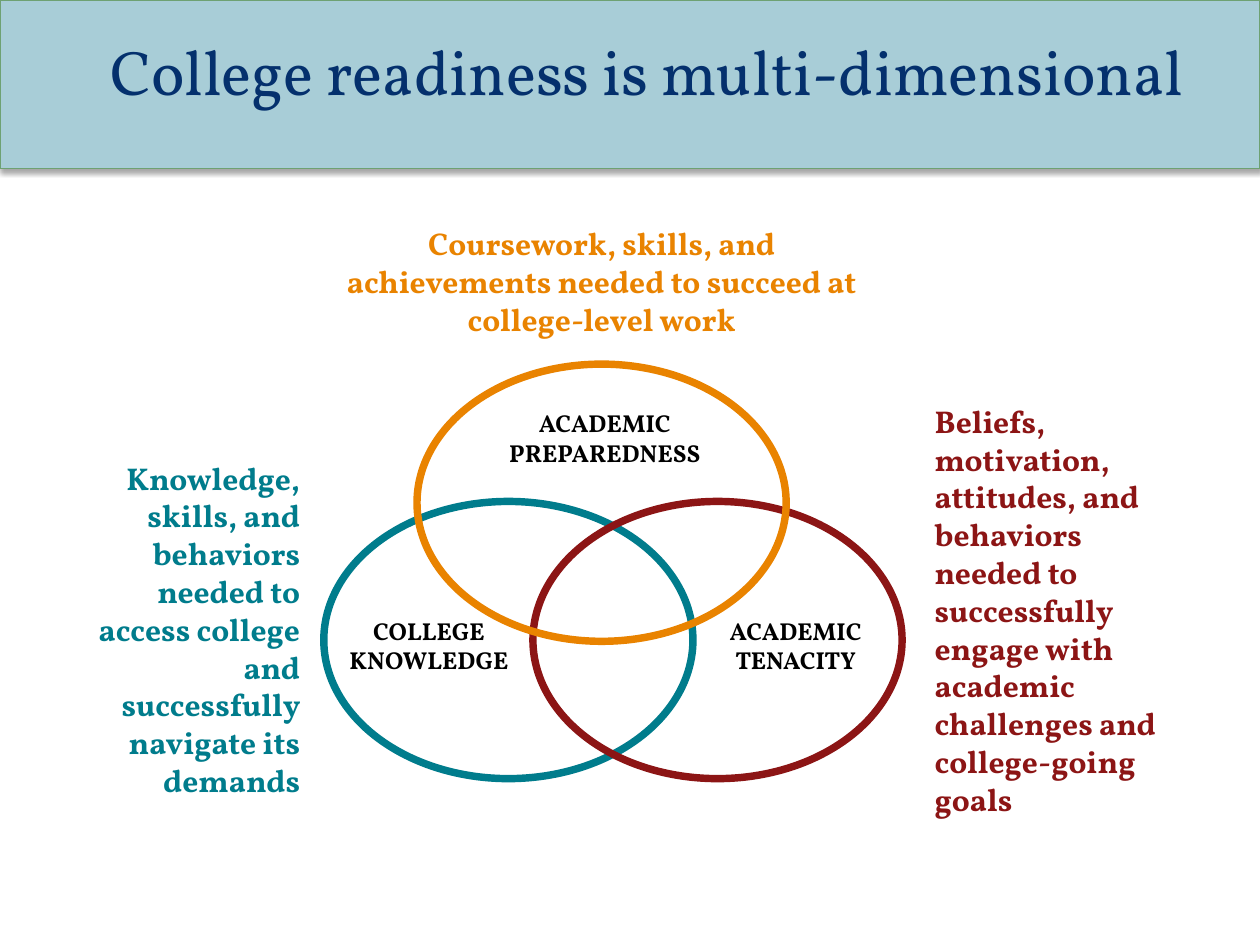
"""Build a slide with a three-ring diagram of college readiness."""
from typing import NamedTuple

from lxml import etree
from pptx import Presentation
from pptx import util as u
from pptx.dml.color import RGBColor
from pptx.enum import shapes, text
from pptx.oxml.ns import qn

FONT = "Vollkorn"
TEAL, RED, ORANGE = "007C8C", "8C1515", "E98300"
NAVY, BLACK = "04306D", "000000"
CENTER, LEFT, RIGHT = text.PP_ALIGN.CENTER, text.PP_ALIGN.LEFT, text.PP_ALIGN.RIGHT
RING_W, RING_H = 2.93, 2.2


class Box(NamedTuple):
    left: float
    top: float
    width: float
    height: float


class Ring(NamedTuple):
    left: float
    top: float
    color: str
    label: str
    label_box: Box
    note: str
    note_box: Box
    align: text.PP_ALIGN


RINGS = [
    Ring(2.57, 3.98, TEAL, "COLLEGE\nKNOWLEDGE", Box(2.57, 4.84, 1.67, 0.57),
         "Knowledge, skills, and behaviors needed to access college and "
         "successfully navigate its demands", Box(0.4, 3.59, 2.08, 2.83), RIGHT),
    Ring(4.23, 3.98, RED, "ACADEMIC TENACITY", Box(5.4, 4.84, 1.83, 0.57),
         "Beliefs, motivation, attitudes, and behaviors needed to successfully "
         "engage with academic challenges and college-going goals",
         Box(7.32, 3.14, 2.17, 3.43), LEFT),
    Ring(3.31, 2.89, ORANGE, "ACADEMIC PREPAREDNESS", Box(3.86, 3.19, 1.88, 0.57),
         "Coursework, skills, and achievements needed to succeed at "
         "college-level work", Box(2.65, 1.73, 4.25, 1.01), CENTER),
]


def rgb(value: str) -> RGBColor:
    return RGBColor.from_string(value)


def inches(box: Box) -> list[u.Length]:
    return [u.Inches(v) for v in box]


def add_text(s, box: Box, content: str, *, size: float, color: str,
             bold: bool = False, align=CENTER, anchor=text.MSO_ANCHOR.TOP) -> None:
    tf = s.shapes.add_textbox(*inches(box)).text_frame
    tf.word_wrap = True
    tf.vertical_anchor = anchor
    tf.text = content
    for p in tf.paragraphs:
        p.alignment = align
        for r in p.runs:
            r.font.name, r.font.size, r.font.bold = FONT, u.Pt(size), bold
            r.font.color.rgb = rgb(color)


def add_outlined(s, kind, box: Box, line: str, width: float, fill: str = ""):
    sp = s.shapes.add_shape(kind, *inches(box))
    sp.shadow.inherit = False
    if fill:
        sp.fill.solid()
        sp.fill.fore_color.rgb = rgb(fill)
    else:
        sp.fill.background()
    sp.line.color.rgb = rgb(line)
    sp.line.width = u.Pt(width)
    return sp


def add_shadow(sp) -> None:
    effects = sp.element.spPr.find(qn("a:effectLst"))
    shadow = etree.SubElement(effects, qn("a:outerShdw"), blurRad=str(u.Pt(3.1)),
                              dist=str(u.Pt(1.8)), dir="5400000", rotWithShape="0")
    color = etree.SubElement(shadow, qn("a:srgbClr"), val=BLACK)
    etree.SubElement(color, qn("a:alpha"), val="35000")


def main() -> None:
    prs = Presentation()
    prs.slide_width, prs.slide_height = u.Inches(10), u.Inches(7.5)
    s = prs.slides.add_slide(prs.slide_layouts[6])

    banner = add_outlined(s, shapes.MSO_SHAPE.RECTANGLE, Box(0, 0, 10, 1.34),
                          "6EA172", 0.75, "A8CDD7")
    add_shadow(banner)
    add_text(s, Box(0.31, 0.09, 9.65, 0.94), "College readiness is multi-dimensional",
             size=36, color=NAVY, anchor=text.MSO_ANCHOR.MIDDLE)

    for ring in RINGS:
        add_outlined(s, shapes.MSO_SHAPE.OVAL,
                     Box(ring.left, ring.top, RING_W, RING_H), ring.color, 4.25)
    for ring in RINGS:
        add_text(s, ring.label_box, ring.label, size=14, color=BLACK, bold=True)
        add_text(s, ring.note_box, ring.note, size=18, color=ring.color,
                 bold=True, align=ring.align)

    prs.save("out.pptx")


if __name__ == "__main__":
    main()
